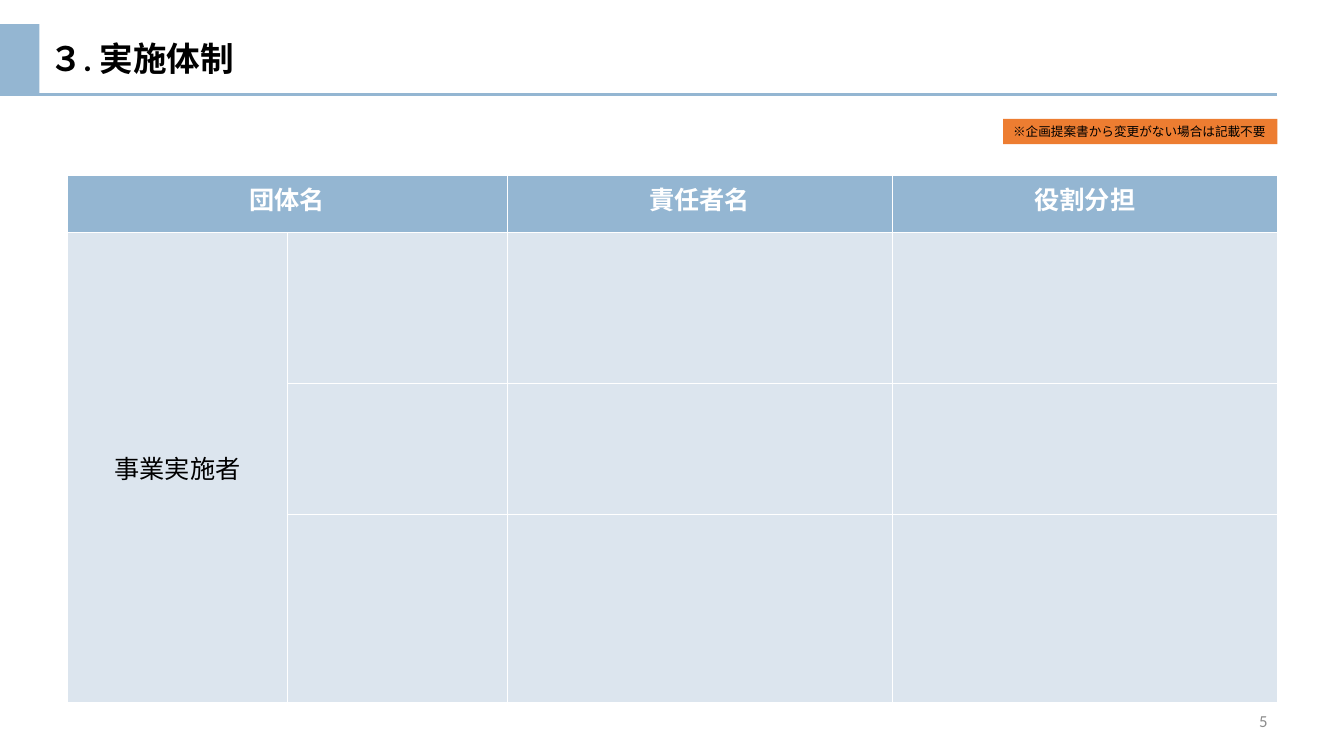
from lxml import etree
from pptx import Presentation
from pptx.dml.color import RGBColor
from pptx.enum.shapes import MSO_CONNECTOR, MSO_SHAPE
from pptx.enum.text import MSO_ANCHOR, PP_ALIGN
from pptx.oxml.ns import qn
from pptx.util import Inches, Pt

LEFT, CENTER, RIGHT = PP_ALIGN.LEFT, PP_ALIGN.CENTER, PP_ALIGN.RIGHT
MIDDLE = MSO_ANCHOR.MIDDLE
RECTANGLE, STRAIGHT = MSO_SHAPE.RECTANGLE, MSO_CONNECTOR.STRAIGHT

# Content
TITLE = "３. 実施体制"
NOTE = "※企画提案書から変更がない場合は記載不要"
PAGE_NUMBER = "5"
HEADERS = {0: "団体名", 2: "責任者名", 3: "役割分担"}
GROUP = "事業実施者"

# Look and grid, in inches
FONT = "Calibri"
BLUE, PALE, ORANGE = "94B6D2", "DCE5EE", "ED7D31"
BLACK, WHITE, GRAY = "000000", "FFFFFF", "8C8C8C"
WIDTH, HEIGHT = 13.33, 7.5
RIGHT_EDGE = 12.67
TAB_TOP, TAB_WIDTH, RULE_Y = 0.24, 0.39, 0.94
COLUMNS = [2.18, 2.18, 3.82, 3.82]
ROWS = [0.57, 1.49, 1.3, 1.87]
TABLE_TOP = 1.74


def color(value):
    return RGBColor.from_string(value)


def box(*lengths):
    return [Inches(length) for length in lengths]


def write(frame, text, size, ink, align, bold=False):
    paragraph = frame.paragraphs[0]
    paragraph.text = text
    paragraph.alignment = align
    font = paragraph.font
    font.name, font.size, font.bold = FONT, Pt(size), bold
    font.color.rgb = color(ink)


def add_block(slide, area, fill):
    block = slide.shapes.add_shape(RECTANGLE, *box(*area))
    block.shadow.inherit = False
    block.fill.solid()
    block.fill.fore_color.rgb = color(fill)
    block.line.fill.background()
    return block


def style_cell(cell, fill):
    properties = cell._tc.get_or_add_tcPr()
    for side in ("a:lnL", "a:lnR", "a:lnT", "a:lnB"):
        border = etree.SubElement(properties, qn(side), w=str(Pt(0.75)))
        solid = etree.SubElement(border, qn("a:solidFill"))
        etree.SubElement(solid, qn("a:srgbClr"), val=WHITE)
    cell.fill.solid()
    cell.fill.fore_color.rgb = color(fill)


def add_organisation_table(slide):
    width = sum(COLUMNS)
    area = box(RIGHT_EDGE - width, TABLE_TOP, width, sum(ROWS))
    table = slide.shapes.add_table(len(ROWS), len(COLUMNS), *area).table
    for column, column_width in zip(table.columns, COLUMNS):
        column.width = Inches(column_width)
    for row, row_height in zip(table.rows, ROWS):
        row.height = Inches(row_height)
    for r in range(len(ROWS)):
        for c in range(len(COLUMNS)):
            style_cell(table.cell(r, c), PALE if r else BLUE)

    table.cell(0, 0).merge(table.cell(0, 1))
    for c, header in HEADERS.items():
        write(table.cell(0, c).text_frame, header, 18, WHITE, CENTER, True)

    group = table.cell(1, 0)
    group.merge(table.cell(len(ROWS) - 1, 0))
    group.vertical_anchor = MIDDLE
    write(group.text_frame, GROUP, 18, BLACK, CENTER)


def main():
    deck = Presentation()
    deck.slide_width, deck.slide_height = box(WIDTH, HEIGHT)
    slide = deck.slides.add_slide(deck.slide_layouts[5])

    # Title
    title = slide.shapes.title
    title.left, title.top, title.width, title.height = box(TAB_WIDTH, 0.31, 9.54, 0.54)
    title.text_frame.vertical_anchor = MIDDLE
    write(title.text_frame, TITLE, 24, BLACK, LEFT, True)

    # Page number
    page = slide.shapes.add_textbox(*box(RIGHT_EDGE - 3.11, 6.95, 3.11, 0.4))
    page.text_frame.word_wrap = True
    page.text_frame.vertical_anchor = MIDDLE
    write(page.text_frame, PAGE_NUMBER, 12, GRAY, RIGHT)

    # Note
    note = add_block(slide, (RIGHT_EDGE - 2.72, 1.18, 2.72, 0.25), ORANGE)
    note.text_frame.word_wrap = False
    write(note.text_frame, NOTE, 9, BLACK, LEFT)

    add_organisation_table(slide)

    # Rule and tab beside the title
    rule = slide.shapes.add_connector(STRAIGHT, *box(0, RULE_Y, RIGHT_EDGE, RULE_Y))
    rule.line.color.rgb = color(BLUE)
    rule.line.width = Pt(2)
    etree.SubElement(rule._element.spPr, qn("a:effectLst"))
    add_block(slide, (0, TAB_TOP, TAB_WIDTH, RULE_Y - TAB_TOP + 0.01), BLUE)

    deck.save("out.pptx")


if __name__ == "__main__":
    main()
